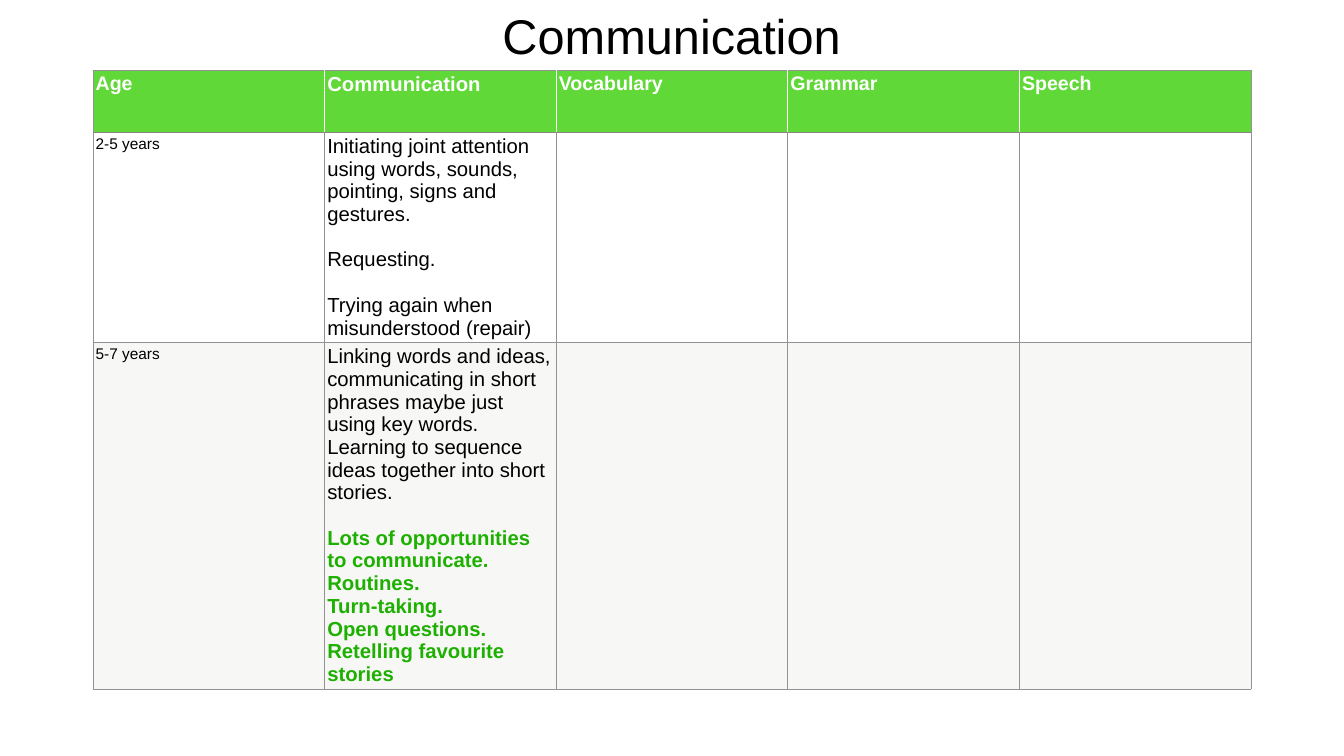
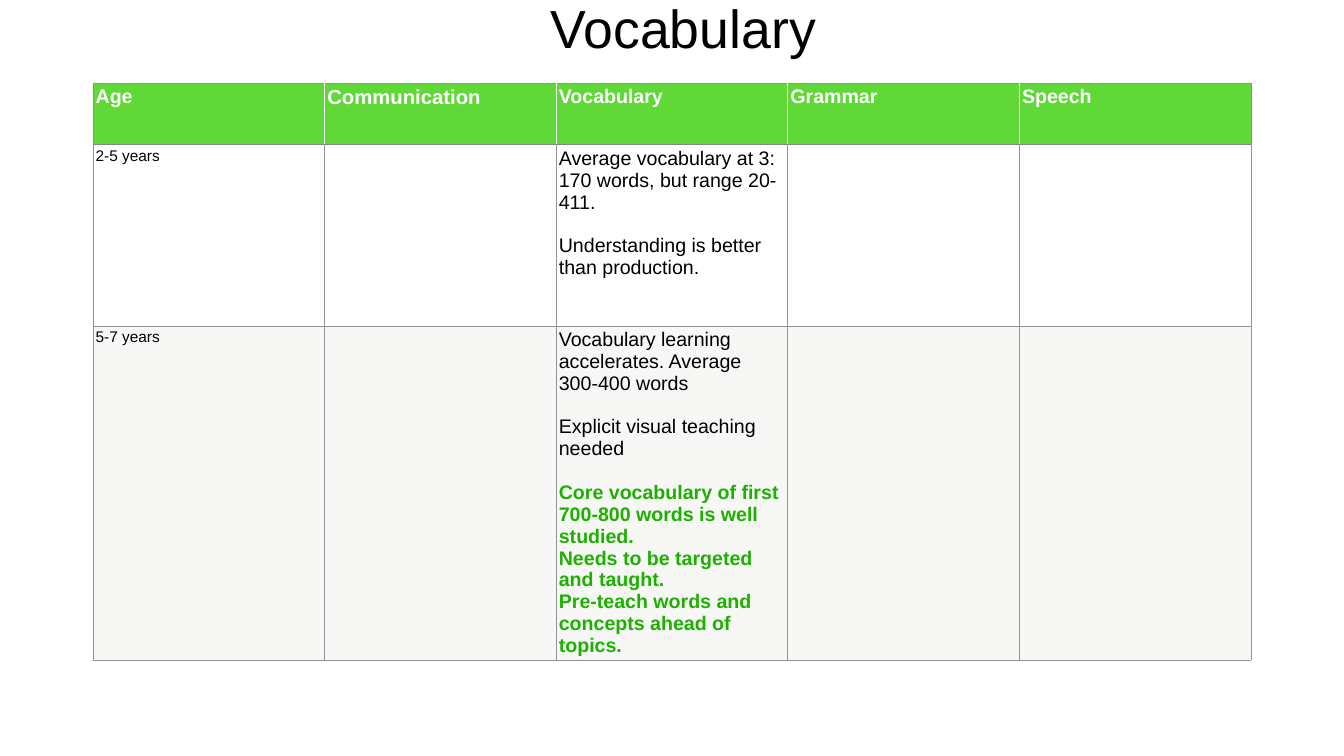
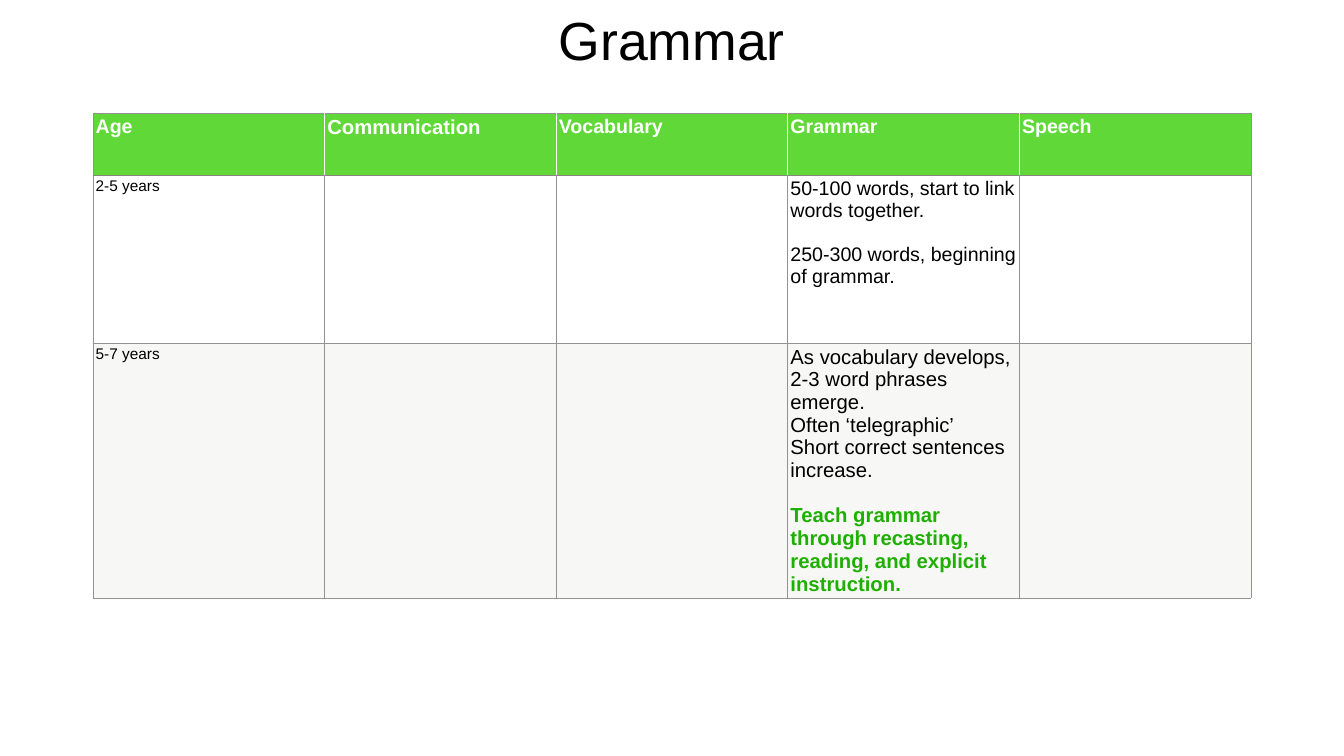
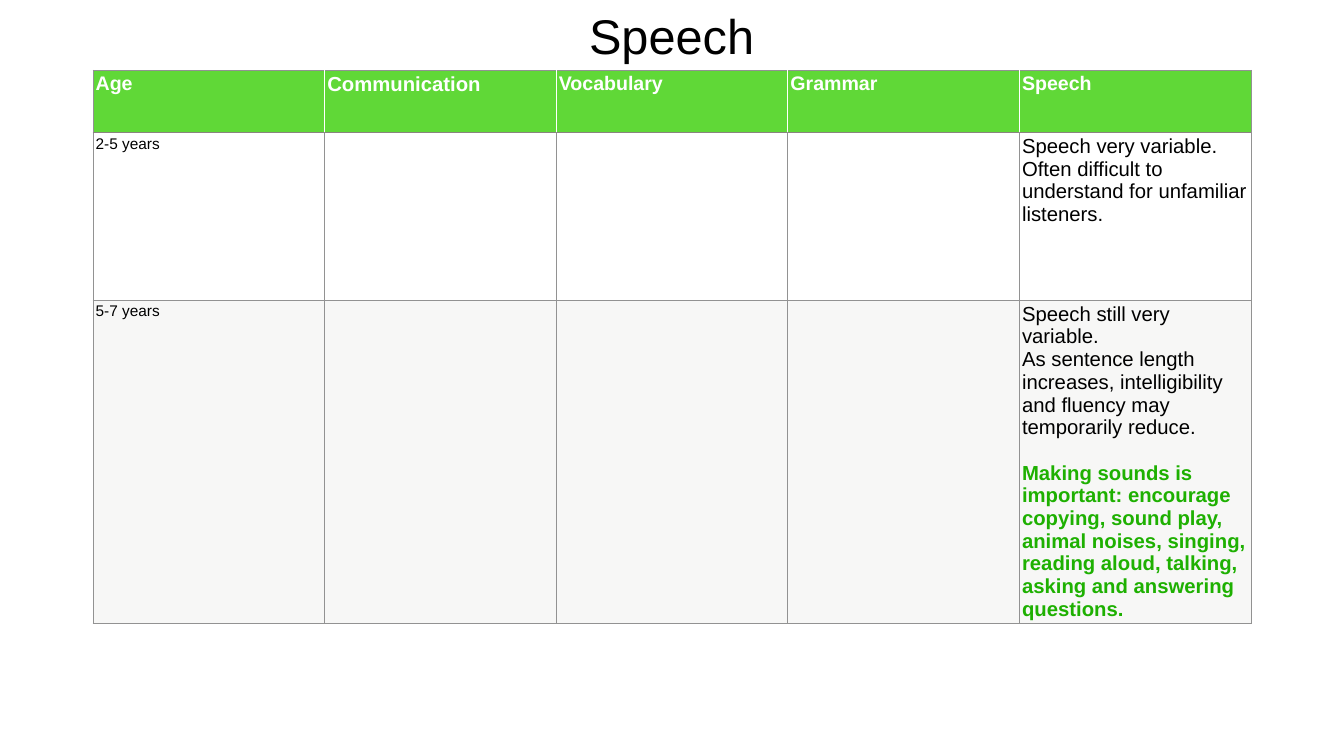
from dataclasses import dataclass

from lxml import etree
from pptx import Presentation
from pptx import util as u
from pptx.dml.color import RGBColor
from pptx.enum import text
from pptx.oxml.ns import qn

COLOURS = {
    "ink": "000000",
    "white": "FFFFFF",
    "header": "60D837",
    "advice": "1EB001",
    "band": "F7F7F6",
    "grid": "929292",
    "rule": "89847F",
}
FONT = "Arial"
HEADINGS = ("Age", "Communication", "Vocabulary", "Grammar", "Speech")
AGES = ("2-5 years", "5-7 years")

# Grid, in inches: the table fills five equal columns
SLIDE_WIDTH, SLIDE_HEIGHT = 26.67, 15
TABLE_WIDTH = 22.98
COLUMN = TABLE_WIDTH / len(HEADINGS)
MARGIN = 0.4 * COLUMN
HEADER_ROW, YOUNGER_ROW, OLDER_ROW = 1.23, 3.33, 4.54
INSET = 0.06
LINE_HEIGHT = 1.12  # share of the text size
HEADING_SIZE, AGE_SIZE = 28, 22
WIDE_HEADING_SIZE = 29


@dataclass(frozen=True)
class Passage:
    """One paragraph of a cell; a gap is one empty line above it."""
    words: str
    size: float = 29
    colour: str = "ink"
    bold: bool = False
    gap: bool = False


@dataclass(frozen=True)
class Topic:
    """One slide: the topic's own column holds the text for each age."""
    name: str
    title_size: float
    title_height: float
    table_top: float
    table_height: float
    younger: tuple[Passage, ...]
    older: tuple[Passage, ...]
    title_left: float = MARGIN
    title_top: float = 0
    younger_row: float = YOUNGER_ROW


def advice(words: str, size: float = 29, gap: bool = False) -> Passage:
    return Passage(words, size, "advice", True, gap)


TOPICS = (
    Topic(
        "Communication", 69.6, 1.39, 1.39, 13.05,
        younger=(
            Passage("Initiating joint attention using words, sounds, pointing, signs and gestures."),
            Passage("Requesting.", gap=True),
            Passage("Trying again when misunderstood (repair)", gap=True),
        ),
        older=(
            Passage("Linking words and ideas, communicating in short phrases maybe just using key words."),
            Passage("Learning to sequence ideas together into short stories."),
            advice("Lots of opportunities to communicate.", gap=True),
            advice("Routines."),
            advice("Turn-taking."),
            advice("Open questions."),
            advice("Retelling favourite stories"),
        ),
    ),
    Topic(
        "Vocabulary", 76.6, 1.53, 1.64, 12.19,
        younger=(
            Passage("Average vocabulary at 3: 170 words, but range 20-411.", 28),
            Passage("Understanding is better than production.", 28, gap=True),
        ),
        older=(
            Passage("Vocabulary learning accelerates. Average 300-400 words", 28),
            Passage("Explicit visual teaching needed", 28, gap=True),
            advice("Core vocabulary of first 700-800 words is well studied.", 28, gap=True),
            advice("Needs to be targeted and taught.", 28),
            advice("Pre-teach words and concepts ahead of topics.", 28),
        ),
        title_left=0.45 * COLUMN, title_top=-0.23, younger_row=3.59,
    ),
    Topic(
        "Grammar", 76.6, 1.53, 2.24, 10.04,
        younger=(
            Passage("50-100 words, start to link words together.", 28),
            Passage("250-300 words, beginning of grammar.", 28, gap=True),
        ),
        older=(
            Passage("As vocabulary develops, 2-3 word phrases emerge."),
            Passage("Often ‘telegraphic’"),
            Passage("Short correct sentences increase."),
            advice("Teach grammar through recasting, reading, and explicit instruction.", gap=True),
        ),
    ),
    Topic(
        "Speech", 69.6, 1.39, 1.39, 11.44,
        younger=(
            Passage("Speech very variable."),
            Passage("Often difficult to understand for unfamiliar listeners."),
        ),
        older=(
            Passage("Speech still very variable."),
            Passage("As sentence length increases, intelligibility and fluency may temporarily reduce."),
            advice("Making sounds is important: encourage copying, sound play, animal noises, "
                   "singing, reading aloud, talking, asking and answering questions.", gap=True),
        ),
    ),
)


def set_insets(box) -> None:
    """Give a cell or text frame the shared inner margins."""
    box.margin_left = box.margin_right = u.Inches(INSET)
    box.margin_top = box.margin_bottom = u.Inches(INSET)


def write(frame, passages: tuple[Passage, ...]) -> None:
    """Write the passages as formatted paragraphs."""
    frame.text = "\n".join(passage.words for passage in passages)
    for paragraph, passage in zip(frame.paragraphs, passages):
        if passage.gap:
            paragraph.space_before = u.Pt(round(passage.size * LINE_HEIGHT, 1))
        for run in paragraph.runs:
            run.font.name = FONT
            run.font.size = u.Pt(passage.size)
            run.font.bold = passage.bold
            run.font.color.rgb = RGBColor.from_string(COLOURS[passage.colour])


def set_border(cell, side: str, colour: str, points: float = 0.25) -> None:
    line = etree.SubElement(cell._tc.get_or_add_tcPr(), qn(f"a:ln{side}"), w=str(u.Pt(points)))
    fill = etree.SubElement(line, qn("a:solidFill"))
    etree.SubElement(fill, qn("a:srgbClr"), val=COLOURS[colour])


def style_cell(cell, row: int, column: int) -> None:
    """Set borders and fill by the cell's place in the table."""
    header = row == 0
    last = len(HEADINGS) - 1
    set_border(cell, "L", "white" if header and column > 0 else "grid")
    set_border(cell, "R", "white" if header and column < last else "grid")
    set_border(cell, "T", *(("rule", 1) if row == 1 else ("grid",)))
    set_border(cell, "B", *(("rule", 1) if header else ("grid",)))
    fill_name = ("header", None, "band")[row]
    if fill_name:
        cell.fill.solid()
        cell.fill.fore_color.rgb = RGBColor.from_string(COLOURS[fill_name])
    else:
        cell.fill.background()
    set_insets(cell)


def add_title(slide, topic: Topic) -> None:
    title = slide.shapes.title
    title.left, title.top = u.Inches(topic.title_left), u.Inches(topic.title_top)
    title.width, title.height = u.Inches(TABLE_WIDTH), u.Inches(topic.title_height)
    frame = title.text_frame
    write(frame, (Passage(topic.name, topic.title_size),))
    frame.paragraphs[0].alignment = text.PP_ALIGN.CENTER
    frame.vertical_anchor = text.MSO_ANCHOR.MIDDLE
    frame.auto_size = text.MSO_AUTO_SIZE.NONE
    frame.word_wrap = True
    set_insets(frame)


def heading(name: str) -> Passage:
    size = WIDE_HEADING_SIZE if name == "Communication" else HEADING_SIZE
    return Passage(name, size, "white", True)


def add_ages_table(slide, topic: Topic) -> None:
    holder = slide.shapes.add_table(
        1 + len(AGES), len(HEADINGS), u.Inches(MARGIN), u.Inches(topic.table_top),
        u.Inches(TABLE_WIDTH), u.Inches(topic.table_height))
    table = holder.table
    table.first_row = table.horz_banding = False
    for column in table.columns:
        column.width = u.Inches(COLUMN)
    for row, height in zip(table.rows, (HEADER_ROW, topic.younger_row, OLDER_ROW)):
        row.height = u.Inches(height)
    holder.height = u.Inches(topic.table_height)

    for row in range(len(table.rows)):
        for column in range(len(HEADINGS)):
            style_cell(table.cell(row, column), row, column)

    # Headings, ages and the topic's own column
    for column, name in enumerate(HEADINGS):
        write(table.cell(0, column).text_frame, (heading(name),))
    topic_column = HEADINGS.index(topic.name)
    for row, (age, passages) in enumerate(zip(AGES, (topic.younger, topic.older)), start=1):
        write(table.cell(row, 0).text_frame, (Passage(age, AGE_SIZE),))
        write(table.cell(row, topic_column).text_frame, passages)


def main() -> None:
    deck = Presentation()
    deck.slide_width, deck.slide_height = u.Inches(SLIDE_WIDTH), u.Inches(SLIDE_HEIGHT)
    title_only = deck.slide_layouts[5]
    for topic in TOPICS:
        slide = deck.slides.add_slide(title_only)
        add_title(slide, topic)
        add_ages_table(slide, topic)
    deck.save("out.pptx")


if __name__ == "__main__":
    main()
